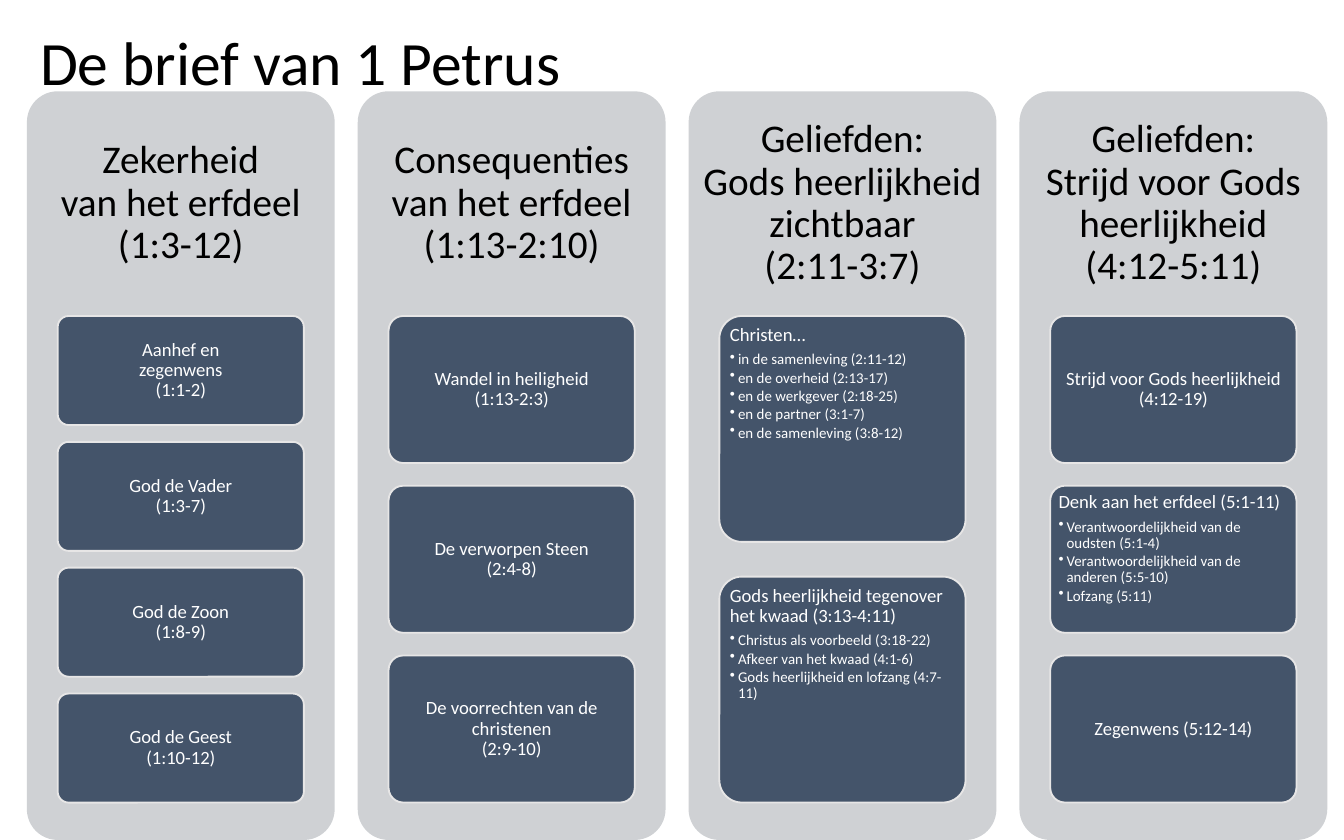
"""Build a slide that outlines the letter of 1 Petrus in four columns."""
from copy import deepcopy

from lxml import etree
from pptx import Presentation
from pptx.dml.color import RGBColor
from pptx.enum.shapes import MSO_SHAPE
from pptx.enum.text import MSO_ANCHOR, PP_ALIGN
from pptx.oxml.ns import qn
from pptx.util import Inches, Pt

ROUNDED = MSO_SHAPE.ROUNDED_RECTANGLE
TOP, MIDDLE = MSO_ANCHOR.TOP, MSO_ANCHOR.MIDDLE
LEFT, CENTER = PP_ALIGN.LEFT, PP_ALIGN.CENTER

TITLE = "De brief van 1 Petrus"
COLUMNS = [
    ("Zekerheid\nvan het erfdeel\n(1:3-12)", [
        ("Aanhef en\nzegenwens\n(1:1-2)", []),
        ("God de Vader\n(1:3-7)", []),
        ("God de Zoon\n(1:8-9)", []),
        ("God de Geest\n(1:10-12)", []),
    ]),
    ("Consequenties van het erfdeel (1:13-2:10)", [
        ("Wandel in heiligheid\n(1:13-2:3)", []),
        ("De verworpen Steen\n(2:4-8)", []),
        ("De voorrechten van de christenen\n(2:9-10)", []),
    ]),
    ("Geliefden:\nGods heerlijkheid zichtbaar\n(2:11-3:7)", [
        ("Christen…", [
            "in de samenleving (2:11-12)",
            "en de overheid (2:13-17)",
            "en de werkgever (2:18-25)",
            "en de partner (3:1-7)",
            "en de samenleving (3:8-12)",
        ]),
        ("Gods heerlijkheid tegenover het kwaad (3:13-4:11)", [
            "Christus als voorbeeld (3:18-22)",
            "Afkeer van het kwaad (4:1-6)",
            "Gods heerlijkheid en lofzang (4:7-11)",
        ]),
    ]),
    ("Geliefden:\nStrijd voor Gods heerlijkheid (4:12-5:11)", [
        ("Strijd voor Gods heerlijkheid (4:12-19)", []),
        ("Denk aan het erfdeel (5:1-11)", [
            "Verantwoordelijkheid van de oudsten (5:1-4)",
            "Verantwoordelijkheid van de anderen (5:5-10)",
            "Lofzang (5:11)",
        ]),
        ("Zegenwens (5:12-14)", []),
    ]),
]

BLACK, WHITE, GREY, NAVY, PALE = "000000", "FFFFFF", "CFD1D4", "44546A", "E7E6E6"
COLUMN_LEFT, COLUMN_TOP, COLUMN_WIDTH, COLUMN_HEIGHT = 0.2, 0.68, 2.29, 5.57
COLUMN_PITCH = COLUMN_WIDTH * 1.075
HEADING_HEIGHT = COLUMN_HEIGHT * 0.3
CARDS_HEIGHT = COLUMN_HEIGHT * 0.65
CARD_WIDTH = COLUMN_WIDTH * 0.8
GAP_RATIO = 0.154
BULLET_INDENT = 0.06


def color(value):
    return RGBColor.from_string(value)


def add_panel(slide, box, fill, outline=None):
    panel = slide.shapes.add_shape(ROUNDED, *map(Inches, box))
    panel.shadow.inherit = False
    panel.adjustments[0] = 0.1
    panel.fill.solid()
    panel.fill.fore_color.rgb = color(fill)
    if outline:
        panel.line.color.rgb = color(outline)
        panel.line.width = Pt(1)
    else:
        panel.line.fill.background()
    return panel


def set_frame(frame, anchor, side, edge):
    values = {
        "word_wrap": True, "vertical_anchor": anchor,
        "margin_left": Inches(side), "margin_right": Inches(side),
        "margin_top": Inches(edge), "margin_bottom": Inches(edge),
    }
    for name, value in values.items():
        setattr(frame, name, value)


def write(paragraph, text, size, ink, align=LEFT, space=0.35):
    paragraph.text = text
    values = {"alignment": align, "line_spacing": 0.9, "space_after": Pt(size * space)}
    for name, value in values.items():
        setattr(paragraph, name, value)
    for run in paragraph.runs:
        for name, value in {"name": "Calibri", "size": Pt(size)}.items():
            setattr(run.font, name, value)
        run.font.color.rgb = color(ink)
    for line_break in paragraph._p.findall(qn("a:br")):
        line_break.insert(0, deepcopy(paragraph.runs[0]._r.rPr))


def add_bullet(frame, text):
    paragraph = frame.add_paragraph()
    paragraph.level = 1
    write(paragraph, text, 8, WHITE, space=0.15)
    properties = paragraph._p.get_or_add_pPr()
    properties.set("marL", str(Inches(BULLET_INDENT)))
    properties.set("indent", str(-Inches(BULLET_INDENT)))
    etree.SubElement(properties, qn("a:buChar")).set("char", "•")


def add_label(slide, box, text, size, margins, align=LEFT):
    frame = slide.shapes.add_textbox(*map(Inches, box)).text_frame
    set_frame(frame, MIDDLE, *margins)
    write(frame.paragraphs[0], text, size, BLACK, align, 0.35 if align == CENTER else 0)


def add_card(slide, box, text, bullets):
    frame = add_panel(slide, box, NAVY, PALE).text_frame
    set_frame(frame, TOP if bullets else MIDDLE, 0.03, 0.02)
    write(frame.paragraphs[0], text, 10, WHITE, LEFT if bullets else CENTER)
    for bullet in bullets:
        add_bullet(frame, bullet)


def add_column(slide, left, heading, cards):
    add_panel(slide, (left, COLUMN_TOP, COLUMN_WIDTH, COLUMN_HEIGHT), GREY)
    heading_box = (left, COLUMN_TOP, COLUMN_WIDTH, HEADING_HEIGHT)
    add_label(slide, heading_box, heading, 21, (0.09, 0.09), CENTER)
    height = CARDS_HEIGHT / (len(cards) + GAP_RATIO * (len(cards) - 1))
    card_left = left + (COLUMN_WIDTH - CARD_WIDTH) / 2
    for row, (text, bullets) in enumerate(cards):
        top = COLUMN_TOP + HEADING_HEIGHT + row * height * (1 + GAP_RATIO)
        add_card(slide, (card_left, top, CARD_WIDTH, height), text, bullets)


def main():
    presentation = Presentation()
    presentation.slide_width, presentation.slide_height = Inches(10), Inches(6.25)
    slide = presentation.slides.add_slide(presentation.slide_layouts[6])
    add_label(slide, (0.2, 0, 9.3, 0.97), TITLE, 33, (0.1, 0.05))
    for index, (heading, cards) in enumerate(COLUMNS):
        add_column(slide, COLUMN_LEFT + index * COLUMN_PITCH, heading, cards)
    presentation.save("out.pptx")


if __name__ == "__main__":
    main()
